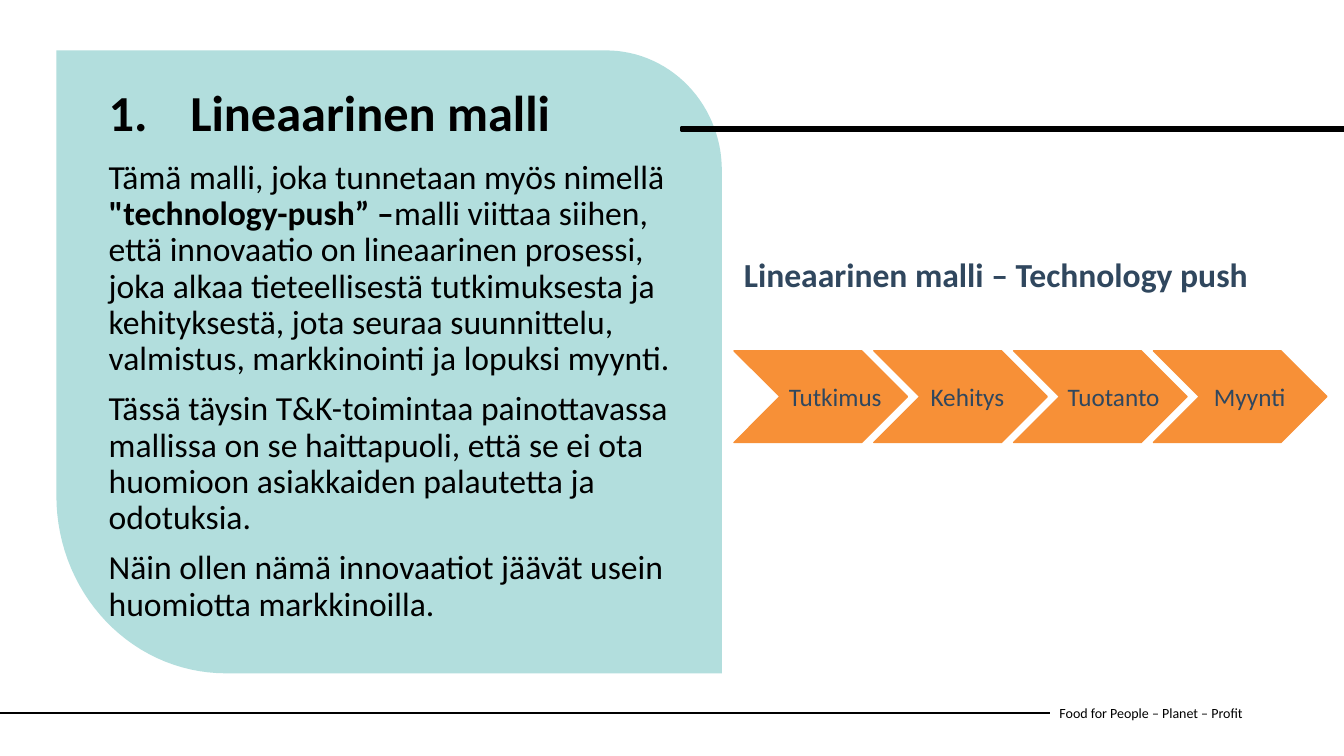
import math
from dataclasses import dataclass

import pptx
import pptx.dml.color
import pptx.enum.shapes
import pptx.enum.text
import pptx.oxml
import pptx.oxml.ns
import pptx.util
from pptx.util import Inches

SHAPE = pptx.enum.shapes.MSO_SHAPE
ALIGN = pptx.enum.text.PP_ALIGN
ANCHOR = pptx.enum.text.MSO_ANCHOR


@dataclass(frozen=True)
class Theme:
    font: str = "Calibri"
    black: str = "000000"
    panel: str = "B2DEDD"
    orange: str = "F79037"
    navy: str = "30475E"
    title_size: int = 36
    body_size: int = 24
    step_size: int = 18
    footer_size: int = 10


@dataclass(frozen=True)
class Box:
    left: float
    top: float
    width: float
    height: float

    def lengths(self) -> tuple:
        return tuple(Inches(v) for v in (self.left, self.top, self.width, self.height))


@dataclass(frozen=True)
class Step:
    label: str
    text_left: float
    text_width: float


THEME = Theme()
PANEL = Box(0.56, 0.5, 6.6, 6.18)
FIRST_CHEVRON = Box(7.28, 3.48, 1.72, 0.91)
CHEVRON_PITCH = 4.16 / 3
STEPS = [
    Step("Tutkimus", 7.72, 1.13),
    Step("Kehitys", 9.05, 1.09),
    Step("Tuotanto", 10.46, 1.17),
    Step("Myynti", 11.81, 1.17),
]
BODY = [
    [
        ("Tämä malli, joka tunnetaan myös nimellä ", False),
        ("\"technology-push” –", True),
        ("malli viittaa siihen, että innovaatio on lineaarinen prosessi, joka alkaa "
         "tieteellisestä tutkimuksesta ja kehityksestä, jota seuraa suunnittelu, "
         "valmistus, markkinointi ja lopuksi myynti.", False),
    ],
    [("Tässä täysin T&K-toimintaa painottavassa mallissa on se haittapuoli, että se "
      "ei ota huomioon asiakkaiden palautetta ja odotuksia.", False)],
    [("Näin ollen nämä innovaatiot jäävät usein huomiotta markkinoilla.", False)],
]


def rgb(color: str) -> pptx.dml.color.RGBColor:
    return pptx.dml.color.RGBColor.from_string(color)


def paint(shape, fill: str, line: str | None = None, line_width: float = 1) -> None:
    shape.shadow.inherit = False
    shape.fill.solid()
    shape.fill.fore_color.rgb = rgb(fill)
    if line is None:
        shape.line.fill.background()
    else:
        shape.line.color.rgb = rgb(line)
        shape.line.width = pptx.util.Pt(line_width)


def add_text(slide, box: Box, paragraphs: list, *, size: int, color: str = THEME.black,
             align=ALIGN.LEFT, anchor=ANCHOR.TOP, line_spacing: float = 1.0,
             space_before: float = 0):
    """Each paragraph is a list of (text, bold) runs."""
    frame = slide.shapes.add_textbox(*box.lengths()).text_frame
    frame.word_wrap = True
    frame.vertical_anchor = anchor
    for index, runs in enumerate(paragraphs):
        paragraph = frame.paragraphs[0] if index == 0 else frame.add_paragraph()
        paragraph.alignment = align
        paragraph.line_spacing = line_spacing
        paragraph.space_before = pptx.util.Pt(space_before)
        for text, bold in runs:
            run = paragraph.add_run()
            run.text = text
            run.font.name = THEME.font
            run.font.size = pptx.util.Pt(size)
            run.font.bold = bold
            run.font.color.rgb = rgb(color)
    return frame


def number_paragraph(paragraph, indent: float) -> None:
    properties = paragraph._p.get_or_add_pPr()
    properties.set("marL", str(Inches(indent)))
    properties.set("indent", str(-Inches(indent)))
    numbering = pptx.oxml.parse_xml(
        f'<a:buAutoNum {pptx.oxml.ns.nsdecls("a")} type="arabicPeriod"/>')
    properties.append(numbering)


def arc(center_x: float, center_y: float, radius_x: float, radius_y: float,
        start: int) -> list[tuple[int, int]]:
    """Quarter ellipse, clockwise on the slide from the start angle in degrees."""
    angles = [math.radians(start + degree) for degree in range(0, 91, 3)]
    return [(Inches(center_x + radius_x * math.cos(a)),
             Inches(center_y + radius_y * math.sin(a))) for a in angles]


def add_panel(slide) -> None:
    right, bottom = PANEL.left + PANEL.width, PANEL.top + PANEL.height
    outline = [
        *arc(PANEL.left + 1.68, bottom - 1.76, 1.68, 1.76, 90),
        (Inches(PANEL.left), Inches(PANEL.top)),
        *arc(right - 1.15, PANEL.top + 1.19, 1.15, 1.19, 270),
    ]
    builder = slide.shapes.build_freeform(Inches(right), Inches(bottom))
    builder.add_line_segments(outline, close=True)
    paint(builder.convert_to_shape(), THEME.panel)


def add_footer(slide) -> None:
    add_text(slide, Box(10.41, 6.87, 2.73, 0.4),
             [[("Food for People – Planet – Profit", False)]],
             size=THEME.footer_size, anchor=ANCHOR.MIDDLE)
    rule = slide.shapes.add_connector(
        pptx.enum.shapes.MSO_CONNECTOR.STRAIGHT,
        Inches(0), Inches(7.07), Inches(10.41), Inches(7.07))
    rule.line.color.rgb = rgb(THEME.black)
    rule.line.width = pptx.util.Pt(1.5)
    rule._element.spPr.append(
        pptx.oxml.parse_xml(f'<a:effectLst {pptx.oxml.ns.nsdecls("a")}/>'))


def add_process(slide) -> None:
    first = FIRST_CHEVRON
    for index in range(len(STEPS)):
        box = Box(first.left + index * CHEVRON_PITCH, first.top, first.width, first.height)
        chevron = slide.shapes.add_shape(SHAPE.CHEVRON, *box.lengths())
        paint(chevron, THEME.orange, THEME.orange)
    for step in STEPS:
        add_text(slide, Box(step.text_left, 3.73, step.text_width, 0.4),
                 [[(step.label, False)]], size=THEME.step_size, color=THEME.navy,
                 align=ALIGN.CENTER)
    add_text(slide, Box(7.28, 2.47, 5.53, 0.5),
             [[("Lineaarinen malli – Technology push", True)]],
             size=THEME.body_size, color=THEME.navy)


def main() -> None:
    presentation = pptx.Presentation()
    presentation.slide_width = Inches(13.33)
    presentation.slide_height = Inches(7.5)
    slide = presentation.slides.add_slide(presentation.slide_layouts[6])

    add_footer(slide)
    add_panel(slide)
    title_bar = slide.shapes.add_shape(SHAPE.RECTANGLE, *Box(6.76, 1.26, 6.57, 0.04).lengths())
    paint(title_bar, THEME.black, THEME.black, 1.93)
    add_text(slide, Box(0.98, 1.54, 6.14, 4.88), BODY, size=THEME.body_size,
             line_spacing=0.9, space_before=10)
    title = add_text(slide, Box(0.98, 0.82, 5.46, 1.09), [[("Lineaarinen malli", True)]],
                     size=THEME.title_size, line_spacing=0.9, space_before=10)
    number_paragraph(title.paragraphs[0], 0.81)
    add_process(slide)
    presentation.save("out.pptx")


if __name__ == "__main__":
    main()
